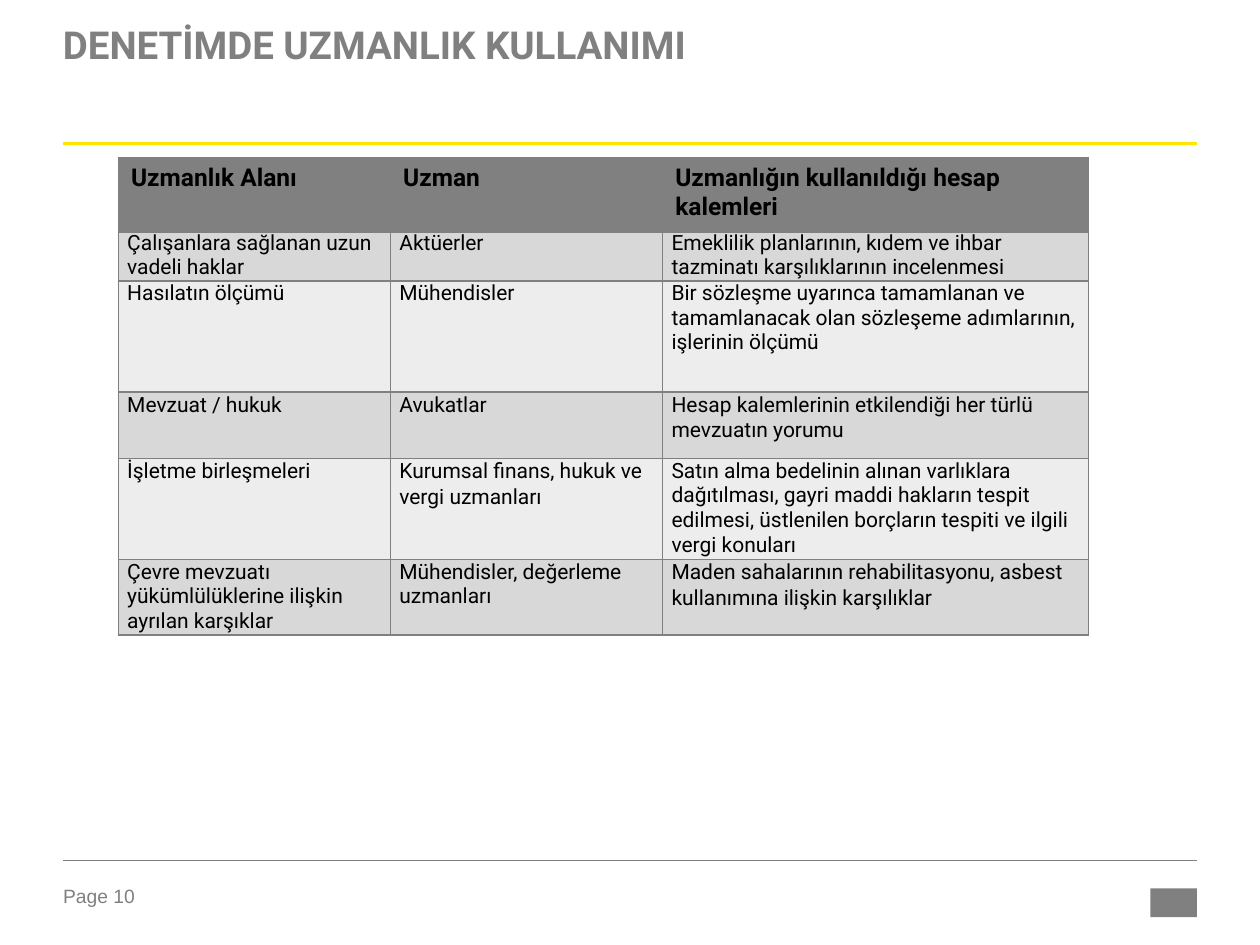
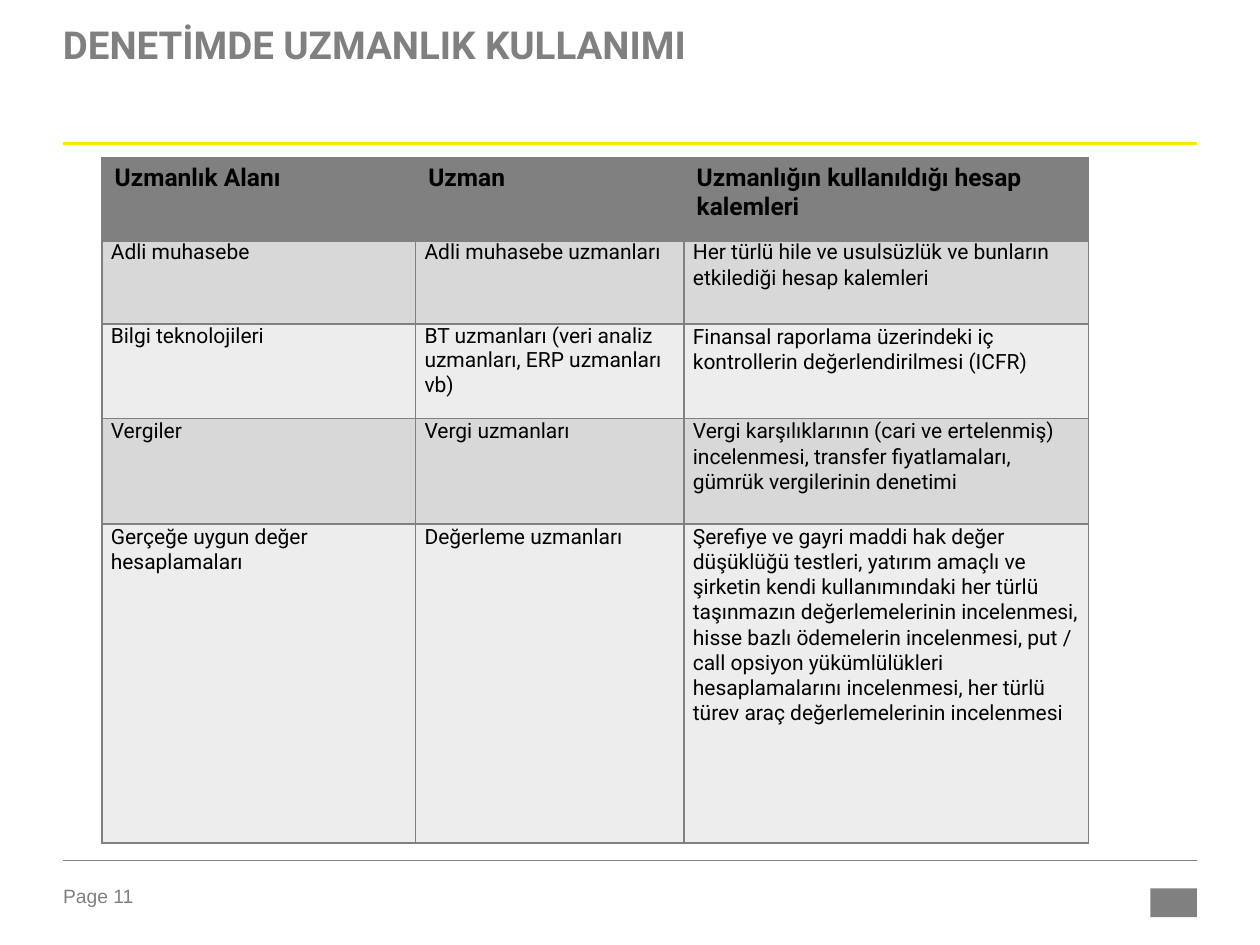
"""Builds two slides with tables on the use of specialists in audits."""
from lxml import etree
from pptx import Presentation
from pptx.dml.color import RGBColor
from pptx.enum.shapes import MSO_CONNECTOR, MSO_SHAPE
from pptx.oxml.ns import qn
from pptx.util import Inches, Pt

RECTANGLE = MSO_SHAPE.RECTANGLE
STRAIGHT = MSO_CONNECTOR.STRAIGHT
GREY = RGBColor(0x80, 0x80, 0x80)
YELLOW = RGBColor(0xFF, 0xE6, 0x00)
BLACK = RGBColor(0x00, 0x00, 0x00)
BANDS = [RGBColor(0xD8, 0xD8, 0xD8), RGBColor(0xED, 0xED, 0xED)]

TITLE = "DENETİMDE UZMANLIK KULLANIMI"
HEADERS = ["Uzmanlık Alanı", "Uzman", "Uzmanlığın kullanıldığı hesap kalemleri"]
RULES = [(1.14, YELLOW, 1.5), (6.83, GREY, 0.25)]

SINGLE = 1.0
EXACT = Pt(14.5)
TIGHT = Pt(14.4)

SLIDES = [
    {
        "page": 10,
        "left": 0.94,
        "columns": [2.16, 2.16, 3.38],
        "header_height": 0.58,
        "rows": [
            (0.39, [SINGLE] * 3, [
                "Çalışanlara sağlanan uzun vadeli haklar",
                "Aktüerler",
                "Emeklilik planlarının, kıdem ve ihbar tazminatı karşılıklarının "
                "incelenmesi"]),
            (0.88, [SINGLE] * 3, [
                "Hasılatın ölçümü",
                "Mühendisler",
                "Bir sözleşme uyarınca tamamlanan ve tamamlanacak olan sözleşeme "
                "adımlarının, işlerinin ölçümü"]),
            (0.53, [EXACT] * 3, [
                "Mevzuat / hukuk",
                "Avukatlar",
                "Hesap kalemlerinin etkilendiği her türlü mevzuatın yorumu"]),
            (0.78, [EXACT, EXACT, SINGLE], [
                "İşletme birleşmeleri",
                "Kurumsal finans, hukuk ve vergi uzmanları",
                "Satın alma bedelinin alınan varlıklara dağıtılması, gayri maddi "
                "hakların tespit edilmesi, üstlenilen borçların tespiti ve ilgili "
                "vergi konuları"]),
            (0.58, [SINGLE, SINGLE, EXACT], [
                "Çevre mevzuatı yükümlülüklerine ilişkin ayrılan karşıklar",
                "Mühendisler, değerleme uzmanları",
                "Maden sahalarının rehabilitasyonu, asbest kullanımına ilişkin "
                "karşılıklar"]),
        ],
    },
    {
        "page": 11,
        "left": 0.81,
        "columns": [2.49, 2.13, 3.21],
        "header_height": 0.65,
        "rows": [
            (0.67, [EXACT] * 3, [
                "Adli muhasebe",
                "Adli muhasebe uzmanları",
                "Her türlü hile ve usulsüzlük ve bunların etkilediği hesap "
                "kalemleri"]),
            (0.75, [SINGLE, SINGLE, EXACT], [
                "Bilgi teknolojileri",
                "BT uzmanları (veri analiz uzmanları, ERP uzmanları vb)",
                "Finansal raporlama üzerindeki iç kontrollerin değerlendirilmesi "
                "(ICFR)"]),
            (0.84, [EXACT] * 3, [
                "Vergiler",
                "Vergi uzmanları",
                "Vergi karşılıklarının (cari ve ertelenmiş) incelenmesi, transfer "
                "fiyatlamaları, gümrük vergilerinin denetimi"]),
            (2.53, [TIGHT] * 3, [
                "Gerçeğe uygun değer hesaplamaları",
                "Değerleme uzmanları",
                "Şerefiye ve gayri maddi hak değer düşüklüğü testleri, yatırım "
                "amaçlı ve şirketin kendi kullanımındaki her türlü taşınmazın "
                "değerlemelerinin incelenmesi, hisse bazlı ödemelerin "
                "incelenmesi, put / call opsiyon yükümlülükleri hesaplamalarını "
                "incelenmesi, her türlü türev araç değerlemelerinin "
                "incelenmesi"]),
        ],
    },
]


def write(tf, text, size, color, font="Roboto", bold=False, spacing=SINGLE):
    tf.word_wrap = True
    p = tf.paragraphs[0]
    p.text = text
    p.line_spacing = spacing
    r = p.runs[0]
    r.font.name = font
    r.font.size = Pt(size)
    r.font.bold = bold
    r.font.color.rgb = color


def set_borders(cell, top, bottom):
    tcPr = cell._tc.get_or_add_tcPr()
    widths = {"a:lnL": 1, "a:lnR": 1, "a:lnT": top, "a:lnB": bottom}
    for i, (tag, width) in enumerate(widths.items()):
        ln = etree.Element(qn(tag), w=str(Pt(width)))
        fill = etree.SubElement(ln, qn("a:solidFill"))
        etree.SubElement(fill, qn("a:srgbClr"), val=str(GREY))
        tcPr.insert(i, ln)


prs = Presentation()
prs.slide_width = Inches(10)
prs.slide_height = Inches(7.5)

for data in SLIDES:
    s = prs.slides.add_slide(prs.slide_layouts[6])

    for text, top, width, height, style in [
        (f"Page {data['page']}", 7.02, 0.79, 0.22,
         {"size": 11, "color": GREY, "font": "Arial"}),
        (TITLE, 0.22, 9, 0.94,
         {"size": 22, "color": GREY, "bold": True, "spacing": 0.85}),
    ]:
        sp = s.shapes.add_textbox(Inches(0.5), Inches(top), Inches(width), Inches(height))
        tf = sp.text_frame
        tf.margin_left = tf.margin_right = tf.margin_top = tf.margin_bottom = 0
        write(tf, text, **style)

    for y, color, width in RULES:
        rule = s.shapes.add_connector(STRAIGHT, Inches(0.5), Inches(y), Inches(9.5), Inches(y))
        rule.line.color.rgb = color
        rule.line.width = Pt(width)
        etree.SubElement(rule._element.spPr, qn("a:effectLst"))

    mark = s.shapes.add_shape(RECTANGLE, Inches(9.13), Inches(7.05), Inches(0.37), Inches(0.23))
    mark.shadow.inherit = False
    mark.fill.solid()
    mark.fill.fore_color.rgb = GREY
    mark.line.fill.background()

    rows = [(data["header_height"], [SINGLE] * 3, HEADERS)] + data["rows"]
    table = s.shapes.add_table(
        len(rows), len(HEADERS), Inches(data["left"]), Inches(1.25),
        Inches(sum(data["columns"])), Inches(sum(row[0] for row in rows))).table
    table.first_row = False
    table.horz_banding = False
    for column, width in zip(table.columns, data["columns"]):
        column.width = Inches(width)

    for i, (height, spacings, texts) in enumerate(rows):
        table.rows[i].height = Inches(height)
        header = i == 0
        for j, (text, spacing) in enumerate(zip(texts, spacings)):
            cell = table.cell(i, j)
            cell.fill.solid()
            cell.fill.fore_color.rgb = GREY if header else BANDS[(i - 1) % 2]
            if not header:
                cell.margin_left = cell.margin_right = Inches(0.07)
                cell.margin_top = cell.margin_bottom = 0
            write(cell.text_frame, text, 14 if header else 12, BLACK,
                  bold=header, spacing=spacing)
            set_borders(cell, 3 if i == 1 else 1, 3 if header else 1)

prs.save("out.pptx")
